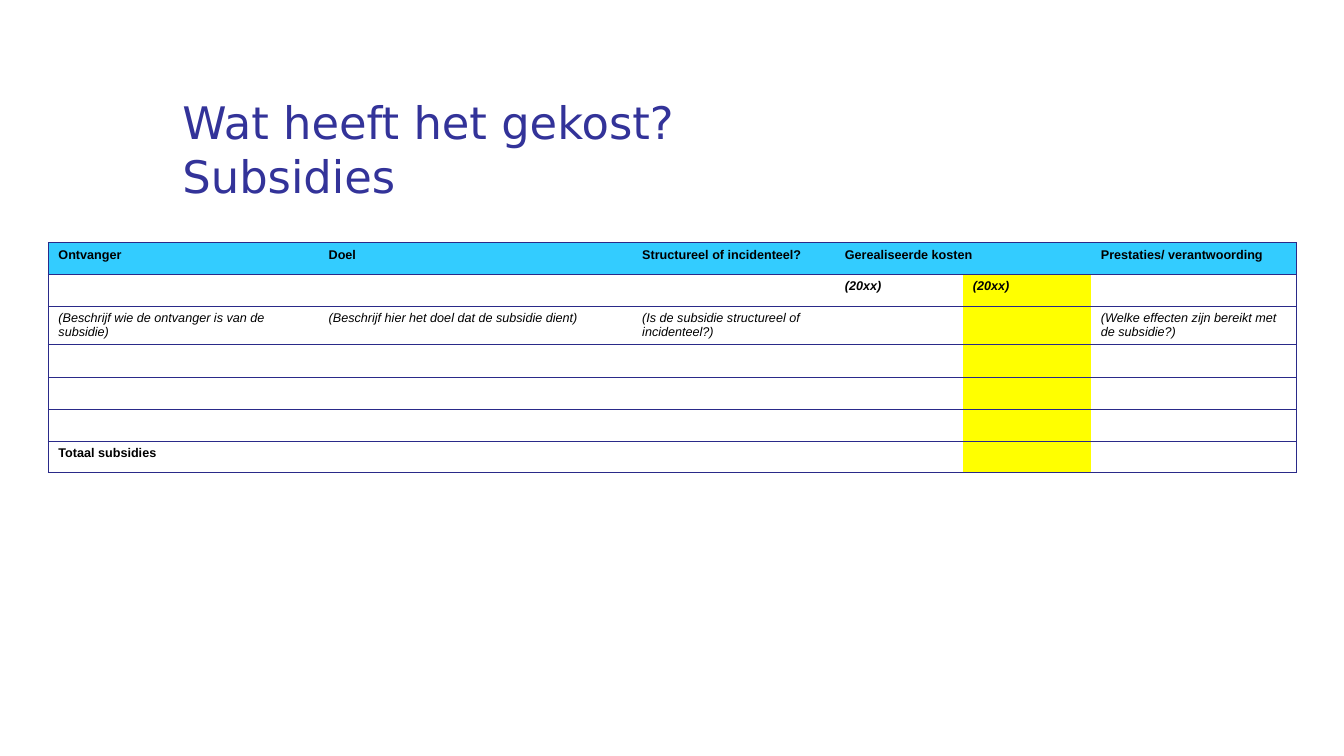
from lxml import etree
from pptx import Presentation
from pptx.dml.color import RGBColor
from pptx.enum import text
from pptx.oxml.ns import qn
from pptx.util import Inches, Pt

TITLE = "Wat heeft het gekost?\vSubsidies"
ROWS = [
    ["Ontvanger", "Doel", "Structureel of incidenteel?", "Gerealiseerde kosten", "",
     "Prestaties/ verantwoording"],
    ["", "", "", "(20xx)", "(20xx)", ""],
    ["(Beschrijf wie de ontvanger is van de subsidie)",
     "(Beschrijf hier het doel dat de subsidie dient)",
     "(Is de subsidie structureel of incidenteel?)", "", "",
     "(Welke effecten zijn bereikt met de subsidie?)"],
    [""] * 6,
    [""] * 6,
    [""] * 6,
    ["Totaal subsidies"] + [""] * 5,
]
COLUMN_WIDTHS = [2.68, 3.11, 2.01, 1.27, 1.27, 2.04]
ROW_HEIGHTS = [0.31, 0.32, 0.37, 0.32, 0.32, 0.32, 0.31]
HIGHLIGHT_COLUMN = 4
EXPLANATION_ROW = 2
ITALIC_ROWS = (1, 2)

INDIGO = RGBColor(0x33, 0x33, 0x99)
NAVY = RGBColor(0x2A, 0x2A, 0x89)
SKY = RGBColor(0x33, 0xCC, 0xFF)
YELLOW = RGBColor(0xFF, 0xFF, 0x00)
BLACK = RGBColor(0x00, 0x00, 0x00)
TEXT_SIZE = Pt(9)


def apply_format(target, values):
    for name, value in values.items():
        setattr(target, name, value)


def add_border(cell, side, visible):
    properties = cell._tc.get_or_add_tcPr()
    line = etree.SubElement(properties, qn(f"a:ln{side}"), w=str(Pt(0.75)))
    if visible:
        fill = etree.SubElement(line, qn("a:solidFill"))
        etree.SubElement(fill, qn("a:srgbClr"), val=str(NAVY))
    else:
        etree.SubElement(line, qn("a:noFill"))


def format_cell(cell, row, column):
    sides = {"L": column == 0, "R": column == len(COLUMN_WIDTHS) - 1, "T": True, "B": True}
    for side, visible in sides.items():
        add_border(cell, side, visible)
    color = SKY if row == 0 else YELLOW if column == HIGHLIGHT_COLUMN else None
    if color is None:
        cell.fill.background()
    else:
        cell.fill.solid()
        cell.fill.fore_color.rgb = color

    paragraph = cell.text_frame.paragraphs[0]
    if ROWS[row][column]:
        run = paragraph.add_run()
        run.text = ROWS[row][column]
        apply_format(run.font, {"name": "Arial", "size": TEXT_SIZE,
                                "bold": row != EXPLANATION_ROW,
                                "italic": row in ITALIC_ROWS})
        run.font.color.rgb = BLACK
    else:
        etree.SubElement(paragraph._p, qn("a:endParaRPr"), sz=str(TEXT_SIZE.centipoints))


def add_title(slide):
    title = slide.shapes.title
    apply_format(title, {"left": Inches(1.71), "top": Inches(0.85),
                         "width": Inches(11.16), "height": Inches(1.25)})
    frame = title.text_frame
    apply_format(frame, {"text": TITLE, "word_wrap": True,
                         "auto_size": text.MSO_AUTO_SIZE.NONE,
                         "vertical_anchor": text.MSO_ANCHOR.MIDDLE})
    paragraph = frame.paragraphs[0]
    paragraph.alignment = text.PP_ALIGN.LEFT
    for run in paragraph.runs:
        apply_format(run.font, {"name": "DejaVu Sans", "size": Pt(32)})
        run.font.color.rgb = INDIGO


def add_subsidy_table(slide):
    table = slide.shapes.add_table(
        len(ROWS), len(COLUMN_WIDTHS), Inches(0.48), Inches(2.41),
        Inches(sum(COLUMN_WIDTHS)), Inches(sum(ROW_HEIGHTS))).table
    apply_format(table, {"first_row": False, "horz_banding": False})
    for column, width in zip(table.columns, COLUMN_WIDTHS):
        column.width = Inches(width)
    for row, height in zip(table.rows, ROW_HEIGHTS):
        row.height = Inches(height)
    for row in range(len(ROWS)):
        for column in range(len(COLUMN_WIDTHS)):
            format_cell(table.cell(row, column), row, column)
    table.cell(0, 3).merge(table.cell(0, 4))


def main():
    presentation = Presentation()
    apply_format(presentation, {"slide_width": Inches(13.33), "slide_height": Inches(7.5)})
    slide = presentation.slides.add_slide(presentation.slide_layouts[5])
    add_title(slide)
    add_subsidy_table(slide)
    presentation.save("out.pptx")


if __name__ == "__main__":
    main()
